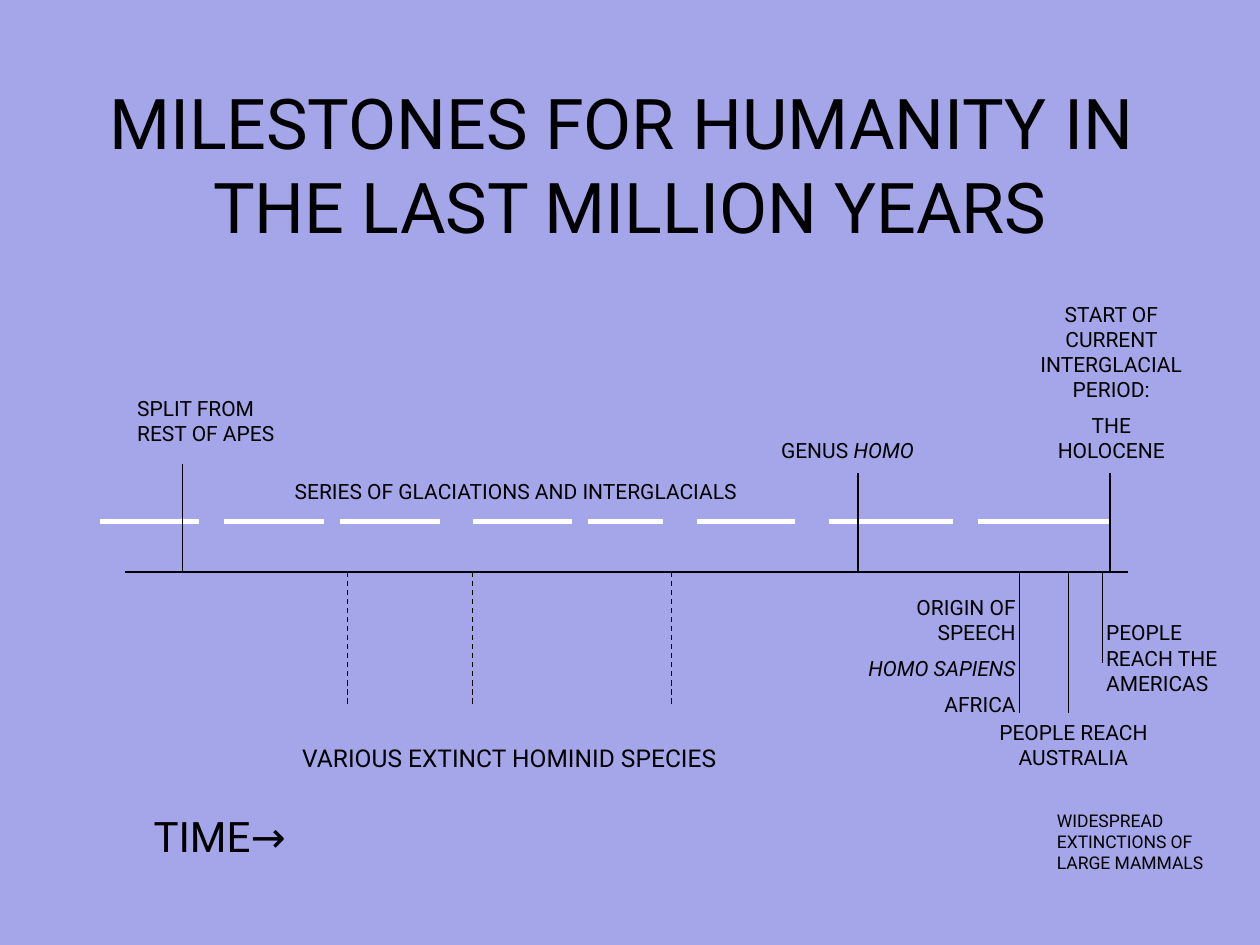
import pptx
import pptx.dml.color
import pptx.enum.dml
import pptx.enum.shapes
import pptx.enum.text
import pptx.oxml
import pptx.oxml.ns
import pptx.util

Inches = pptx.util.Inches
Pt = pptx.util.Pt
RGBColor = pptx.dml.color.RGBColor
Align = pptx.enum.text.PP_ALIGN
Fit = pptx.enum.text.MSO_AUTO_SIZE
Anchor = pptx.enum.text.MSO_ANCHOR
Dash = pptx.enum.dml.MSO_LINE

LILAC = RGBColor(0xA5, 0xA5, 0xE9)
BLACK = RGBColor(0, 0, 0)
WHITE = RGBColor(0xFF, 0xFF, 0xFF)

FONT = "Roboto"
AXIS = 4.54
ICE = 4.14

LEFT, MID, RIGHT = Align.LEFT, Align.CENTER, Align.RIGHT

LABELS = [
    ((0.99, 3.09, 1.38, 0.5), 12, LEFT, [[("SPLIT FROM REST OF APES", False)]]),
    ((2.3, 5.85, 3.95, 0.33), 14, LEFT,
     [[("VARIOUS EXTINCT HOMINID SPECIES", False)]]),
    ((6.78, 4.67, 1.38, 1.11), 12, RIGHT,
     [[("ORIGIN OF SPEECH", False)], [("HOMO SAPIENS", True)],
      [("AFRICA", False)]]),
    ((6.1, 3.42, 1.38, 0.3), 12, LEFT, [[("GENUS ", False), ("HOMO", True)]]),
    ((8.13, 2.34, 1.38, 1.21), 12, MID,
     [[("START OF CURRENT INTERGLACIAL PERIOD:", False)],
      [("THE HOLOCENE", False)]]),
    ((2.24, 3.75, 4.21, 0.3), 12, LEFT,
     [[("SERIES OF GLACIATIONS AND INTERGLACIALS", False)]]),
    ((1.12, 6.38, 1.25, 0.5), 24, LEFT, [[("TIME→", False)]]),
    ((8.68, 4.87, 1.19, 0.71), 12, LEFT,
     [[("PEOPLE REACH THE AMERICAS", False)]]),
    ((7.83, 5.66, 1.38, 0.5), 12, MID, [[("PEOPLE REACH AUSTRALIA", False)]]),
    ((8.29, 6.38, 1.38, 0.61), 10, LEFT,
     [[("WIDESPREAD EXTINCTIONS OF LARGE MAMMALS", False)]]),
]

ICE_AGES = [(0.79, 1.58), (1.78, 2.57), (2.7, 3.49), (3.75, 4.54),
            (4.67, 5.26), (5.53, 6.31), (6.58, 7.56), (7.76, 8.81)]
EVENTS = [(1.45, 3.68), (6.81, 3.75), (8.81, 3.75),
          (8.09, 5.66), (8.48, 5.66), (8.75, 5.26)]
EXTINCT = [2.76, 3.75, 5.33]


def assign(item, values):
    for name, value in values.items():
        setattr(item, name, value)


def style(font, size, slant=False):
    assign(font, {"name": FONT, "size": Pt(size), "italic": slant})
    font.color.rgb = BLACK


def add_title(slide, text):
    title = slide.shapes.title
    assign(title, {"left": Inches(0.75), "top": Inches(0.67),
                   "width": Inches(8.5), "height": Inches(1.25)})
    frame = title.text_frame
    assign(frame, {"text": text, "word_wrap": True, "auto_size": Fit.NONE,
                   "vertical_anchor": Anchor.MIDDLE})
    para = frame.paragraphs[0]
    para.alignment = MID
    for run in para.runs:
        style(run.font, 40)


def add_label(slide, box, size, align, paras):
    frame = slide.shapes.add_textbox(*map(Inches, box)).text_frame
    assign(frame, {"word_wrap": True, "auto_size": Fit.SHAPE_TO_FIT_TEXT})
    for index, parts in enumerate(paras):
        para = frame.add_paragraph() if index else frame.paragraphs[0]
        assign(para, {"alignment": align,
                      "space_before": Pt(size / 2 if index else 0)})
        for text, slant in parts:
            run = para.add_run()
            run.text = text
            style(run.font, size, slant)


def add_line(group, start, end, color=BLACK, width=0.75, dash=None):
    line = group.shapes.add_connector(
        pptx.enum.shapes.MSO_CONNECTOR.STRAIGHT,
        *map(Inches, start + end))
    line.line.color.rgb = color
    assign(line.line, {"width": Pt(width), "dash_style": dash})
    props = line._element.spPr
    props.append(pptx.oxml.parse_xml(
        "<a:effectLst %s/>" % pptx.oxml.ns.nsdecls("a")))


def add_chart(slide):
    group = slide.shapes.add_group_shape()
    add_line(group, (0.99, AXIS), (8.95, AXIS))
    for left, right in ICE_AGES:
        add_line(group, (left, ICE), (right, ICE), WHITE, 3)
    for place, end in EVENTS:
        add_line(group, (place, AXIS), (place, end))
    for place in EXTINCT:
        add_line(group, (place, AXIS), (place, 5.59), dash=Dash.DASH)


def main():
    deck = pptx.Presentation()
    assign(deck, {"slide_width": Inches(10), "slide_height": Inches(7.5)})
    slide = deck.slides.add_slide(deck.slide_layouts[5])
    fill = slide.background.fill
    fill.solid()
    fill.fore_color.rgb = LILAC
    add_title(slide, "MILESTONES FOR HUMANITY IN \vTHE LAST MILLION YEARS")
    add_chart(slide)
    for label in LABELS:
        add_label(slide, *label)
    deck.save("out.pptx")


if __name__ == "__main__":
    main()
